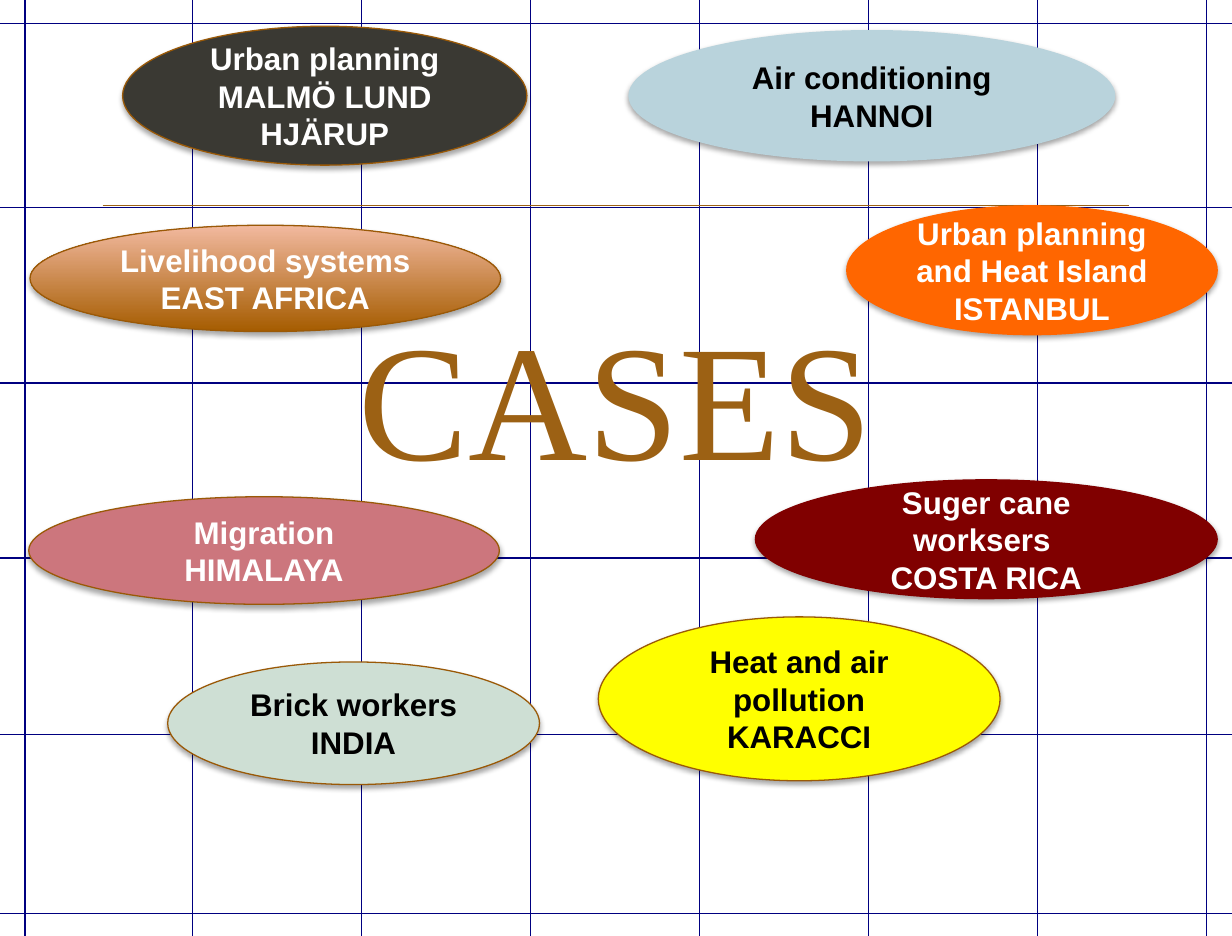
from dataclasses import dataclass

from pptx import Presentation
from pptx.dml.color import RGBColor
from pptx.enum.shapes import MSO_CONNECTOR as Connector, MSO_SHAPE as Preset
from pptx.enum.text import MSO_ANCHOR as Anchor, PP_ALIGN as Align
from pptx.oxml import parse_xml
from pptx.oxml.ns import nsdecls
from pptx.shapes.autoshape import Shape
from pptx.slide import Slide
from pptx.text.text import TextFrame
from pptx.util import Inches, Pt


@dataclass(frozen=True)
class Theme:
    grid: str = "000080"
    accent: str = "9C6114"
    outline: str = "9A5907"
    light: str = "FFFFFF"
    dark: str = "000000"
    title_font: str = "Times New Roman"
    label_font: str = "Arial"
    title_size: float = 95
    label_size: float = 18
    line_width: float = 0.75


@dataclass(frozen=True)
class Case:
    text: str
    left: float
    top: float
    width: float
    height: float
    fills: tuple[str, ...]  # two colours make a gradient, from bottom to top
    text_color: str
    outlined: bool = True


THEME = Theme()
CM_PER_INCH = 2.54
SLIDE_WIDTH, SLIDE_HEIGHT = 25 / CM_PER_INCH, 19 / CM_PER_INCH
GRID_LEFT, GRID_RIGHT = -0.13, 9.96
GRID_TOP, GRID_BOTTOM = -0.07, 7.57
GRID_ROWS = (0.19, 1.66, 3.06, 4.46, 5.87, 7.3)
GRID_COLUMNS = [0.2] + [1.54 + 1.35 * index for index in range(7)]

CASES = (
    Case("Urban planning and Heat Island ISTANBUL", 6.76, 1.64, 2.97, 1.04,
         ("FF6600",), THEME.light, outlined=False),
    Case("Suger cane worksers \nCOSTA RICA", 6.03, 3.83, 3.7, 0.96,
         ("800000",), THEME.light, outlined=False),
    Case("Urban planning MALMÖ LUND HJÄRUP", 0.98, 0.21, 3.23, 1.11,
         ("3A3933",), THEME.light),
    Case("Livelihood systems EAST AFRICA", 0.24, 1.8, 3.76, 0.85,
         ("A55C00", "F2B99F"), THEME.light),
    Case("Brick workers INDIA", 1.34, 5.29, 2.97, 0.98,
         ("CEDFD4",), THEME.dark),
    Case("Air conditioning HANNOI", 5.02, 0.24, 3.89, 1.05,
         ("B9D3DC",), THEME.dark, outlined=False),
    Case("Migration HIMALAYA", 0.23, 3.97, 3.76, 0.86,
         ("CC767D",), THEME.light),
    Case("Heat and air pollution KARACCI", 4.78, 4.93, 3.21, 1.31,
         ("FFFF00",), THEME.dark),
)


def rgb(color: str) -> RGBColor:
    return RGBColor.from_string(color)


def add_line(page: Slide, x1: float, y1: float, x2: float, y2: float, color: str) -> None:
    line = page.shapes.add_connector(
        Connector.STRAIGHT, Inches(x1), Inches(y1), Inches(x2), Inches(y2))
    line.line.color.rgb = rgb(color)
    line.line.width = Pt(THEME.line_width)
    line._element.spPr.append(parse_xml(f"<a:effectLst {nsdecls('a')}/>"))


def write_centred(frame: TextFrame, text: str, font: str, size: float,
                  color: str, anchor: Anchor, bold: bool = False) -> None:
    frame.text = text
    frame.word_wrap = True
    frame.vertical_anchor = anchor
    for para in frame.paragraphs:
        para.alignment = Align.CENTER
        for span in para.runs:
            span.font.name = font
            span.font.size = Pt(size)
            span.font.bold = bold
            span.font.color.rgb = rgb(color)


def add_grid(page: Slide) -> None:
    for y in GRID_ROWS:
        add_line(page, GRID_LEFT, y, GRID_RIGHT, y, THEME.grid)
    for x in GRID_COLUMNS:
        add_line(page, x, GRID_TOP, x, GRID_BOTTOM, THEME.grid)


def add_title(page: Slide) -> None:
    box = page.shapes.add_textbox(Inches(0.49), Inches(2.74), Inches(8.86), Inches(1.25))
    write_centred(box.text_frame, "CASES", THEME.title_font, THEME.title_size,
                  THEME.accent, Anchor.BOTTOM)


def add_case(page: Slide, case: Case) -> None:
    oval = page.shapes.add_shape(Preset.OVAL, Inches(case.left), Inches(case.top),
                                 Inches(case.width), Inches(case.height))
    if len(case.fills) > 1:
        oval.fill.gradient()
        oval.fill.gradient_angle = 90
        for stop, color in zip(oval.fill.gradient_stops, case.fills):
            stop.color.rgb = rgb(color)
    else:
        oval.fill.solid()
        oval.fill.fore_color.rgb = rgb(case.fills[0])
    if case.outlined:
        oval.line.color.rgb = rgb(THEME.outline)
        oval.line.width = Pt(THEME.line_width)
    else:
        oval.line.fill.background()
    add_soft_shadow(oval)
    write_centred(oval.text_frame, case.text, THEME.label_font, THEME.label_size,
                  case.text_color, Anchor.MIDDLE, bold=True)


def add_soft_shadow(oval: Shape) -> None:
    """Replace the inherited shadow with a faint one straight below."""
    oval.shadow.inherit = False
    effects = oval._element.spPr.find(
        "{http://schemas.openxmlformats.org/drawingml/2006/main}effectLst")
    effects.append(parse_xml(
        f'<a:outerShdw {nsdecls("a")} blurRad="{Pt(3.1)}" dist="{Pt(1.8)}" '
        f'dir="5400000" rotWithShape="0"><a:srgbClr val="{THEME.dark}">'
        '<a:alpha val="35000"/></a:srgbClr></a:outerShdw>'))


def main() -> None:
    deck = Presentation()
    deck.slide_width, deck.slide_height = Inches(SLIDE_WIDTH), Inches(SLIDE_HEIGHT)
    page = deck.slides.add_slide(deck.slide_layouts[6])
    page.background.fill.solid()
    page.background.fill.fore_color.rgb = rgb(THEME.light)
    add_grid(page)
    add_line(page, 0.82, 1.64, 9.02, 1.64, THEME.accent)
    add_title(page)
    for case in CASES:
        add_case(page, case)
    deck.save("out.pptx")


if __name__ == "__main__":
    main()
